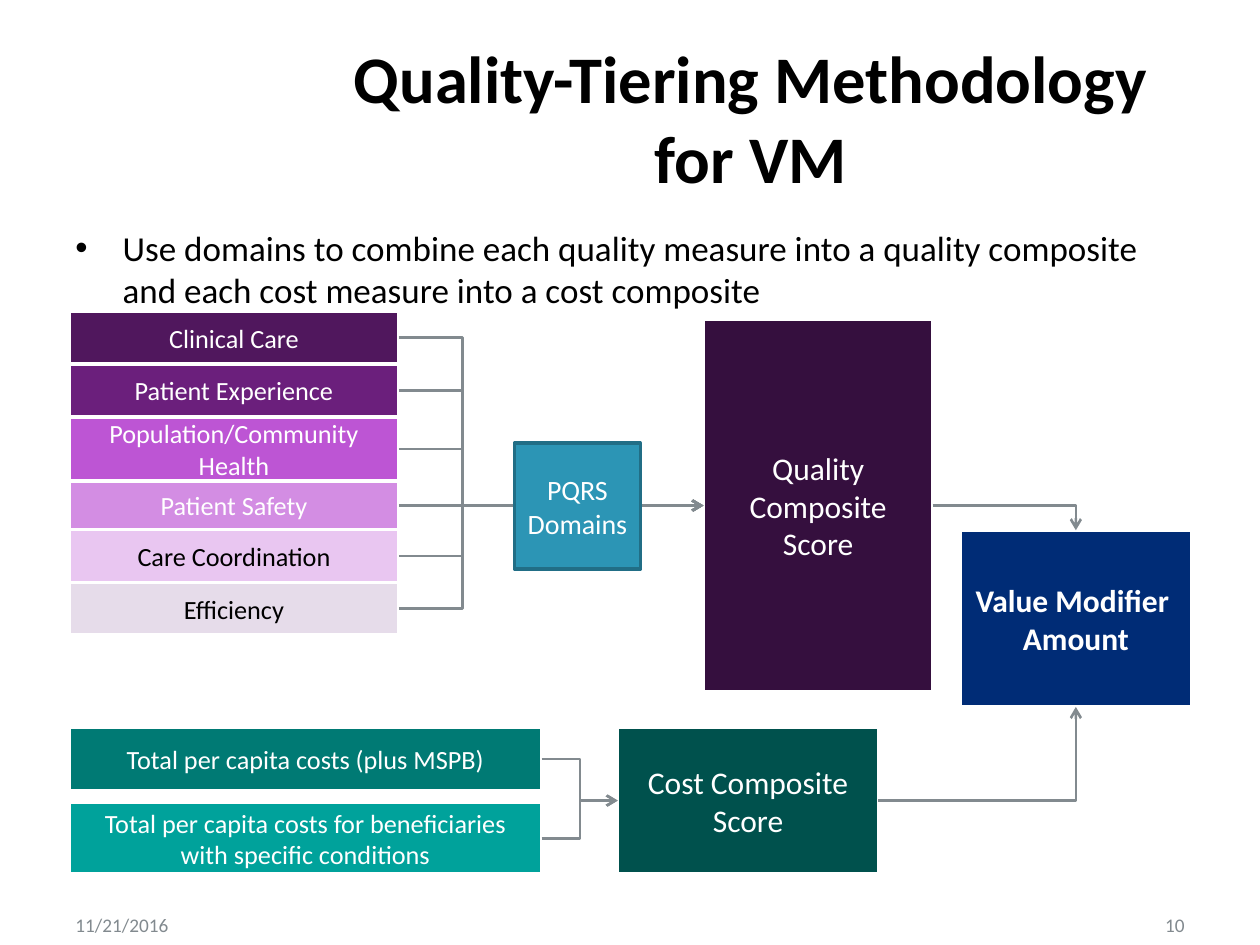
from lxml import etree
from pptx import Presentation
from pptx.dml.color import RGBColor
from pptx.enum.shapes import MSO_CONNECTOR as Connector, MSO_SHAPE as Shape
from pptx.enum.text import MSO_ANCHOR as Anchor, PP_ALIGN as Align
from pptx.oxml.ns import qn
from pptx.util import Pt

COLORS = {
    "black": "000000", "white": "FFFFFF", "gray": "828A8F",
    "clinical": "50175D", "experience": "6B1F7C", "population": "BD55D4",
    "safety": "D38DE3", "coordination": "E9C6F1", "efficiency": "E6DCEA",
    "quality": "350F3E", "modifier": "002C76", "capita": "007A74",
    "conditions": "00A29B", "cost": "00514D", "pqrs": "2C95B5", "pqrs_edge": "216E86",
}

LEFT = 39.5
DOMAIN_TOP, DOMAIN_WIDTH = 177.8, 188.5
DOMAINS = [  # label, height, fill, text colour
    ("Clinical Care", 30.2, "clinical", "white"),
    ("Patient Experience", 30.2, "experience", "white"),
    ("Population/Community Health", 36.7, "population", "white"),
    ("Patient Safety", 27.7, "safety", "white"),
    ("Care Coordination", 30.2, "coordination", "black"),
    ("Efficiency", 30.2, "efficiency", "black"),
]
COST_WIDTH = 270
COSTS = [  # label, top, height, fill
    ("Total per capita costs (plus MSPB)", 415.5, 36.5, "capita"),
    ("Total per capita costs for beneficiaries with specific conditions", 458.6, 41, "conditions"),
]
QUALITY_BOX = (402, 182.4, 131, 213)
MODIFIER_BOX = (548.8, 303, 132, 101)
COST_BOX = (353, 415.5, 149, 84)
PQRS_BOX = (294, 253.3, 72, 72)
DOMAIN_BEND, COST_BEND = 264.4, 331.5


def rgb(name):
    return RGBColor.from_string(COLORS[name])


def write(frame, text, size, color="black", align=Align.LEFT, anchor=Anchor.MIDDLE, bold=False):
    for attribute, value in {"word_wrap": True, "vertical_anchor": anchor}.items():
        setattr(frame, attribute, value)
    paragraph = frame.paragraphs[0]
    paragraph.text = text
    paragraph.alignment = align
    for run in paragraph.runs:
        for attribute, value in {"name": "Calibri", "size": Pt(size), "bold": bold}.items():
            setattr(run.font, attribute, value)
        run.font.color.rgb = rgb(color)
    return paragraph


def add_text(slide, bounds, text, size, **style):
    label = slide.shapes.add_textbox(*map(Pt, bounds))
    return write(label.text_frame, text, size, **style)


def add_bullet(paragraph, indent):
    properties = paragraph._p.get_or_add_pPr()
    properties.set("marL", str(Pt(indent)))
    properties.set("indent", str(-Pt(indent)))
    etree.SubElement(properties, qn("a:buFont")).set("typeface", "Arial")
    etree.SubElement(properties, qn("a:buChar")).set("char", "•")


def add_box(slide, bounds, text, size, fill, color="white", edge="white", bold=False):
    box = slide.shapes.add_shape(Shape.RECTANGLE, *map(Pt, bounds))
    box.shadow.inherit = False
    box.fill.solid()
    box.fill.fore_color.rgb = rgb(fill)
    box.line.color.rgb = rgb(edge)
    box.line.width = Pt(2)
    write(box.text_frame, text, size, color, Align.CENTER, bold=bold)


def add_arrow(slide, start, end, bend=None):
    """Elbow arrow turning at x = bend, or with a single corner if bend is None."""
    arrow = slide.shapes.add_connector(Connector.ELBOW, *map(Pt, start + end))
    arrow.line.color.rgb = rgb("gray")
    arrow.line.width = Pt(1.5)
    etree.SubElement(arrow.line._get_or_add_ln(), qn("a:tailEnd")).set("type", "arrow")
    properties = arrow._element.spPr
    etree.SubElement(properties, qn("a:effectLst"))
    geometry = properties.find(qn("a:prstGeom"))
    if bend is None:
        geometry.set("prst", "bentConnector2")
        return
    ratio = (bend - start[0]) / (end[0] - start[0])
    guides = geometry.get_or_add_avLst()
    guide = etree.SubElement(guides, qn("a:gd"))
    guide.set("name", "adj1")
    guide.set("fmla", f"val {round(ratio * 100000)}")


def left_middle(bounds):
    left, top, _, height = bounds
    return left, top + height / 2


def right_middle(bounds):
    left, top, width, height = bounds
    return left + width, top + height / 2


def add_domains(slide):
    """Stack the quality domains and return their bounds."""
    stack, top = [], DOMAIN_TOP
    for label, height, fill, color in DOMAINS:
        bounds = (LEFT, top, DOMAIN_WIDTH, height)
        add_box(slide, bounds, label, 15, fill, color)
        stack.append(bounds)
        top += height
    return stack


def add_costs(slide):
    """Add the cost measures and return their bounds."""
    measures = []
    for label, top, height, fill in COSTS:
        bounds = (LEFT, top, COST_WIDTH, height)
        add_box(slide, bounds, label, 15, fill)
        measures.append(bounds)
    return measures


def main():
    deck = Presentation()
    deck.slide_width, deck.slide_height = Pt(720), Pt(540)
    slide = deck.slides.add_slide(deck.slide_layouts[6])

    add_text(slide, (174, 21.6, 510, 90), "Quality-Tiering Methodology for VM", 38,
             align=Align.CENTER, bold=True)
    summary = add_text(slide, (36, 126, 648, 360),
                       "Use domains to combine each quality measure into a quality composite "
                       "and each cost measure into a cost composite", 20, anchor=Anchor.TOP)
    add_bullet(summary, 27)
    add_text(slide, (36, 522, 168, 13), "11/21/2016", 11, color="gray")
    add_text(slide, (516, 522, 168, 13), "10", 11, color="gray", align=Align.RIGHT)

    domains = add_domains(slide)
    add_box(slide, QUALITY_BOX, "Quality Composite Score", 18, "quality")
    add_box(slide, MODIFIER_BOX, "Value Modifier \vAmount", 18, "modifier", bold=True)
    costs = add_costs(slide)
    add_box(slide, COST_BOX, "Cost Composite Score", 18, "cost")

    for domain in domains:
        add_arrow(slide, right_middle(domain), left_middle(QUALITY_BOX), DOMAIN_BEND)
    for cost in costs:
        add_arrow(slide, right_middle(cost), left_middle(COST_BOX), COST_BEND)
    left, top, width, height = MODIFIER_BOX
    center = left + width / 2
    add_arrow(slide, right_middle(QUALITY_BOX), (center, top))
    add_arrow(slide, right_middle(COST_BOX), (center, top + height))

    add_box(slide, PQRS_BOX, "PQRS Domains", 16, "pqrs", edge="pqrs_edge")
    deck.save("out.pptx")


if __name__ == "__main__":
    main()
